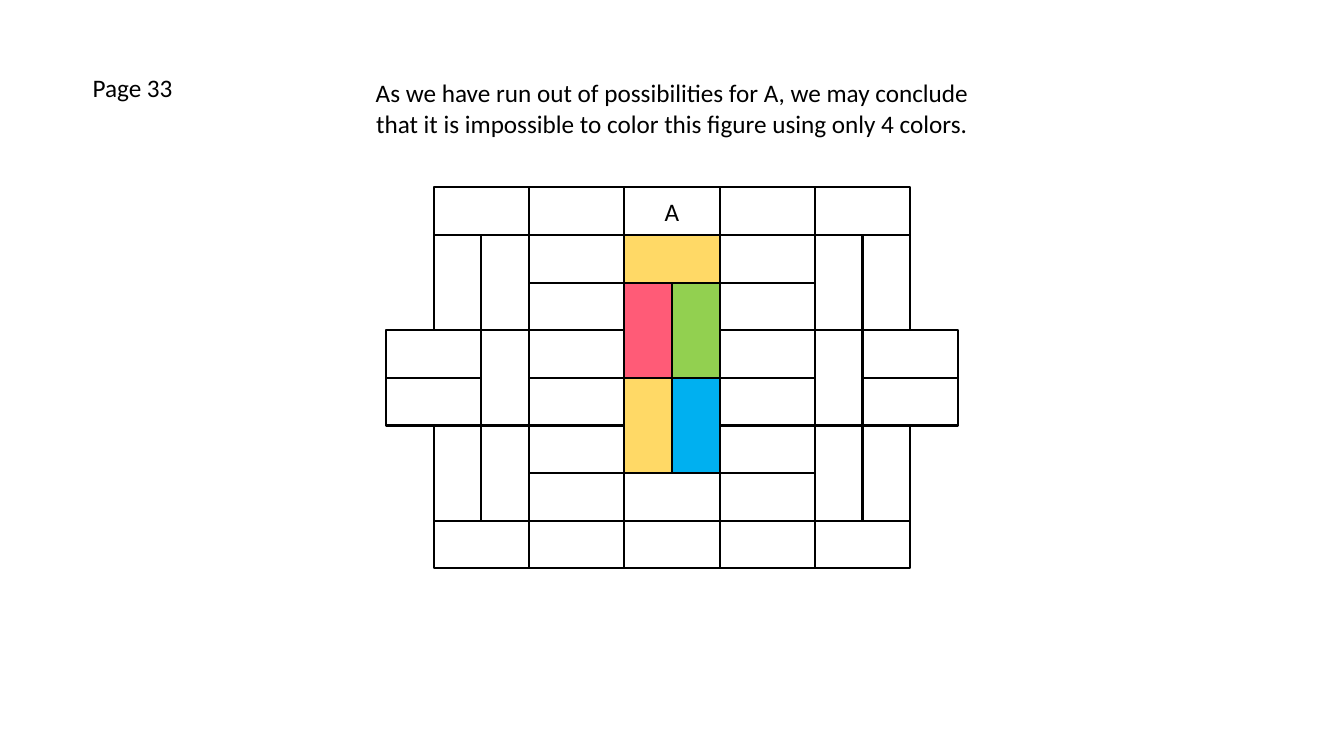
from pptx import Presentation
from pptx.dml.color import RGBColor
from pptx.enum.shapes import MSO_SHAPE
from pptx.enum.text import MSO_ANCHOR, MSO_AUTO_SIZE, PP_ALIGN
from pptx.util import Inches, Pt

CONCLUSION = [
    "As we have run out of possibilities for A, we may conclude",
    "that it is impossible to color this figure using only 4 colors.",
]
PAGE_LABEL = "Page 33"

# "<>" is a lying brick, "^" above "v" is a standing brick, "." is empty
BRICKWORK = [
    ".<><><><><>.",
    ".^^<><><>^^.",
    ".vv<>^^<>vv.",
    "<>^<>vv<>^<>",
    "<>v<>^^<>v<>",
    ".^^<>vv<>^^.",
    ".vv<><><>vv.",
    ".<><><><><>.",
]
BRICK_SIZES = {"<": (2, 1), "^": (1, 2)}

# keyed by the (row, column) of a brick's top left cell
BRICK_COLORS = {
    (1, 5): "FFD966",
    (2, 5): "FF5B77",
    (2, 6): "92D050",
    (4, 5): "FFD966",
    (4, 6): "00B0F0",
}
BRICK_LABELS = {(0, 5): "A"}

SLIDE_WIDTH, SLIDE_HEIGHT = Inches(13.33), Inches(7.5)
CELL = SLIDE_HEIGHT * 0.063
WALL_LEFT = (SLIDE_WIDTH - CELL * len(BRICKWORK[0])) / 2
WALL_TOP = SLIDE_HEIGHT * 0.248
FONT_FORMAT = {"name": "Calibri", "size": Pt(18), "bold": False}


def rgb(color):
    return RGBColor.from_string(color)


def write(shape, lines, alignment, anchor):
    frame = shape.text_frame
    frame.text = "\n".join(lines)
    frame_format = {
        "word_wrap": False,
        "auto_size": MSO_AUTO_SIZE.NONE,
        "vertical_anchor": anchor,
    }
    for name, value in frame_format.items():
        setattr(frame, name, value)
    for paragraph in frame.paragraphs:
        paragraph.alignment = alignment
        for name, value in FONT_FORMAT.items():
            setattr(paragraph.font, name, value)
        paragraph.font.color.rgb = rgb("000000")


def add_brick(slide, row, column, columns, rows):
    brick = slide.shapes.add_shape(
        MSO_SHAPE.RECTANGLE,
        round(WALL_LEFT + column * CELL),
        round(WALL_TOP + row * CELL),
        round(columns * CELL),
        round(rows * CELL),
    )
    brick.shadow.inherit = False
    brick.line.color.rgb = rgb("000000")
    brick.line.width = Pt(1.5)
    cell = (row, column)
    if cell in BRICK_COLORS:
        brick.fill.solid()
        brick.fill.fore_color.rgb = rgb(BRICK_COLORS[cell])
    else:
        brick.fill.background()
    if cell in BRICK_LABELS:
        write(brick, [BRICK_LABELS[cell]], PP_ALIGN.CENTER, MSO_ANCHOR.MIDDLE)


def main():
    presentation = Presentation()
    presentation.slide_width = SLIDE_WIDTH
    presentation.slide_height = SLIDE_HEIGHT
    slide = presentation.slides.add_slide(
        presentation.slide_layouts.get_by_name("Title Only")
    )

    title = slide.shapes.title
    title_place = {
        "left": Inches(3.59),
        "top": Inches(0.72),
        "width": Inches(6.15),
        "height": Inches(0.71),
    }
    for name, value in title_place.items():
        setattr(title, name, value)
    write(title, CONCLUSION, PP_ALIGN.CENTER, MSO_ANCHOR.TOP)

    page_box = slide.shapes.add_textbox(
        Inches(0.82), Inches(0.67), Inches(1), Inches(0.4)
    )
    write(page_box, [PAGE_LABEL], PP_ALIGN.LEFT, MSO_ANCHOR.TOP)

    for row, cells in enumerate(BRICKWORK):
        for column, mark in enumerate(cells):
            if mark in BRICK_SIZES:
                add_brick(slide, row, column, *BRICK_SIZES[mark])

    presentation.save("out.pptx")


if __name__ == "__main__":
    main()
